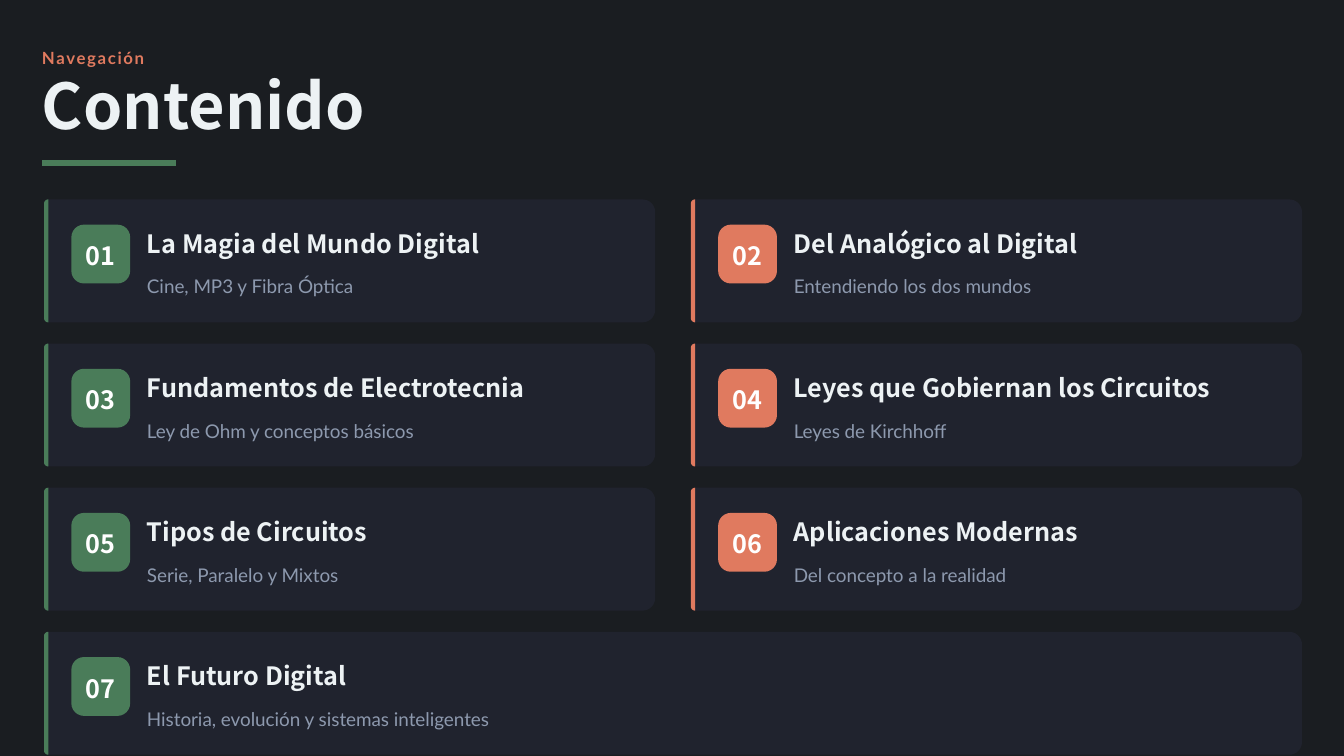
"""Build the dark contents slide with seven numbered topic cards."""
import math

from lxml import etree
from pptx import Presentation
from pptx import util as u
from pptx.dml.color import RGBColor
from pptx.enum import shapes, text
from pptx.oxml import ns

NIGHT = RGBColor(0x1A, 0x1D, 0x21)
SLATE = RGBColor(0x2B, 0x2D, 0x42)
GREEN = RGBColor(0x4A, 0x7C, 0x59)
CORAL = RGBColor(0xE0, 0x7A, 0x5F)
PALE = RGBColor(0xED, 0xF2, 0xF4)
GREY = RGBColor(0x8D, 0x99, 0xAE)
WHITE = RGBColor(0xFF, 0xFF, 0xFF)
HEADING, BODY = "Noto Sans CJK SC", "Lato"

TOPICS = [
    ("La Magia del Mundo Digital", "Cine, MP3 y Fibra Óptica"),
    ("Del Analógico al Digital", "Entendiendo los dos mundos"),
    ("Fundamentos de Electrotecnia", "Ley de Ohm y conceptos básicos"),
    ("Leyes que Gobiernan los Circuitos", "Leyes de Kirchhoff"),
    ("Tipos de Circuitos", "Serie, Paralelo y Mixtos"),
    ("Aplicaciones Modernas", "Del concepto a la realidad"),
    ("El Futuro Digital", "Historia, evolución y sistemas inteligentes"),
]
CARD_LEFT, CARD_TOP, CARD_HEIGHT = 31.5, 142.5, 87.75
CARD_WIDTH, FULL_WIDTH = 436.5, 898.5
COLUMN_STEP, ROW_STEP = 462, 102.95
LEFT_RADIUS, RIGHT_RADIUS = 3, 9

deck = Presentation()
deck.slide_width, deck.slide_height = u.Pt(960), u.Pt(540)
page = deck.slides.add_slide(deck.slide_layouts[6])
page.background.fill.solid()
page.background.fill.fore_color.rgb = NIGHT


def write(box, words, size, font, color, spacing, bold=True):
    """Put one styled line into a box and return its run."""
    frame = box.text_frame
    frame.word_wrap = True
    frame.vertical_anchor = text.MSO_ANCHOR.MIDDLE
    frame.margin_left = frame.margin_right = frame.margin_top = frame.margin_bottom = 0
    para = frame.paragraphs[0]
    para.line_spacing = spacing
    span = para.add_run()
    span.text = words
    span.font.size = u.Pt(size)
    span.font.name = font
    span.font.bold = bold
    span.font.color.rgb = color
    return span


def panel(left, top, width, height, left_radius, right_radius, color):
    """Draw a filled outline whose left and right corners are rounded separately."""
    corners = [
        (left + left_radius, top + left_radius, left_radius, 180),
        (left + width - right_radius, top + right_radius, right_radius, 270),
        (left + width - right_radius, top + height - right_radius, right_radius, 0),
        (left + left_radius, top + height - left_radius, left_radius, 90),
    ]
    points = []
    for x, y, radius, start in corners:
        for turn in range(0, 91, 10) if radius else [0]:
            angle = math.radians(start + turn)
            points.append((u.Pt(x + radius * math.cos(angle)),
                           u.Pt(y + radius * math.sin(angle))))
    builder = page.shapes.build_freeform(*points[0])
    builder.add_line_segments(points[1:], close=True)
    shape = builder.convert_to_shape()
    shape.shadow.inherit = False
    shape.fill.solid()
    shape.fill.fore_color.rgb = color
    shape.line.fill.background()
    return shape


kicker = page.shapes.add_textbox(u.Pt(30), u.Pt(30), u.Pt(906), u.Pt(18))
span = write(kicker, "Navegación", 12, BODY, CORAL, 1.3)
span.font._element.set("spc", "120")
title = page.shapes.add_textbox(u.Pt(30), u.Pt(57), u.Pt(922), u.Pt(45))
write(title, "Contenido", 45, HEADING, PALE, 0.8)
panel(30, 114, 96, 4.5, 0, 0, GREEN)

for index, (heading, detail) in enumerate(TOPICS):
    row, column = divmod(index, 2)
    left = CARD_LEFT + column * COLUMN_STEP
    top = CARD_TOP + row * ROW_STEP
    width = FULL_WIDTH if index == len(TOPICS) - 1 else CARD_WIDTH
    accent = CORAL if column else GREEN

    card = panel(left, top, width, CARD_HEIGHT, LEFT_RADIUS, RIGHT_RADIUS, SLATE)
    tint = card._element.spPr.find(".//" + ns.qn("a:srgbClr"))
    etree.SubElement(tint, ns.qn("a:alpha"), val="40000")
    panel(left, top, 3, CARD_HEIGHT, LEFT_RADIUS, 0, accent)

    badge = page.shapes.add_shape(shapes.MSO_SHAPE.ROUNDED_RECTANGLE, u.Pt(left + 19.5),
                                  u.Pt(top + 18), u.Pt(42), u.Pt(42))
    badge.adjustments[0] = 9 / 42
    badge.shadow.inherit = False
    badge.fill.solid()
    badge.fill.fore_color.rgb = accent
    badge.line.fill.background()
    write(badge, f"{index + 1:02d}", 18, HEADING, WHITE, 1.1)
    badge.text_frame.paragraphs[0].alignment = text.PP_ALIGN.CENTER

    box = page.shapes.add_textbox(u.Pt(left + 73.5), u.Pt(top + 18), u.Pt(330), u.Pt(24))
    write(box, heading, 18, HEADING, PALE, 1.1)
    box = page.shapes.add_textbox(u.Pt(left + 73.5), u.Pt(top + 48), u.Pt(330), u.Pt(21.75))
    write(box, detail, 13.5, BODY, GREY, 1.4, bold=False)

deck.save("out.pptx")
